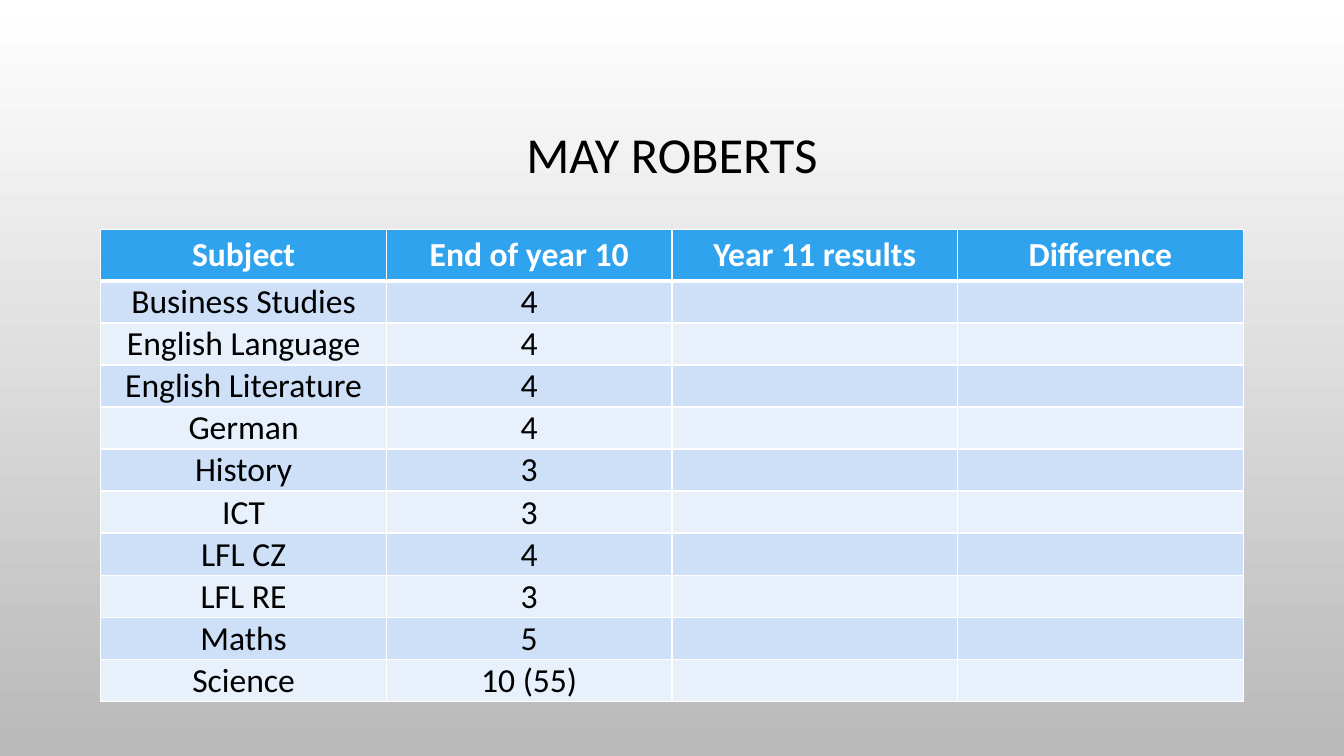
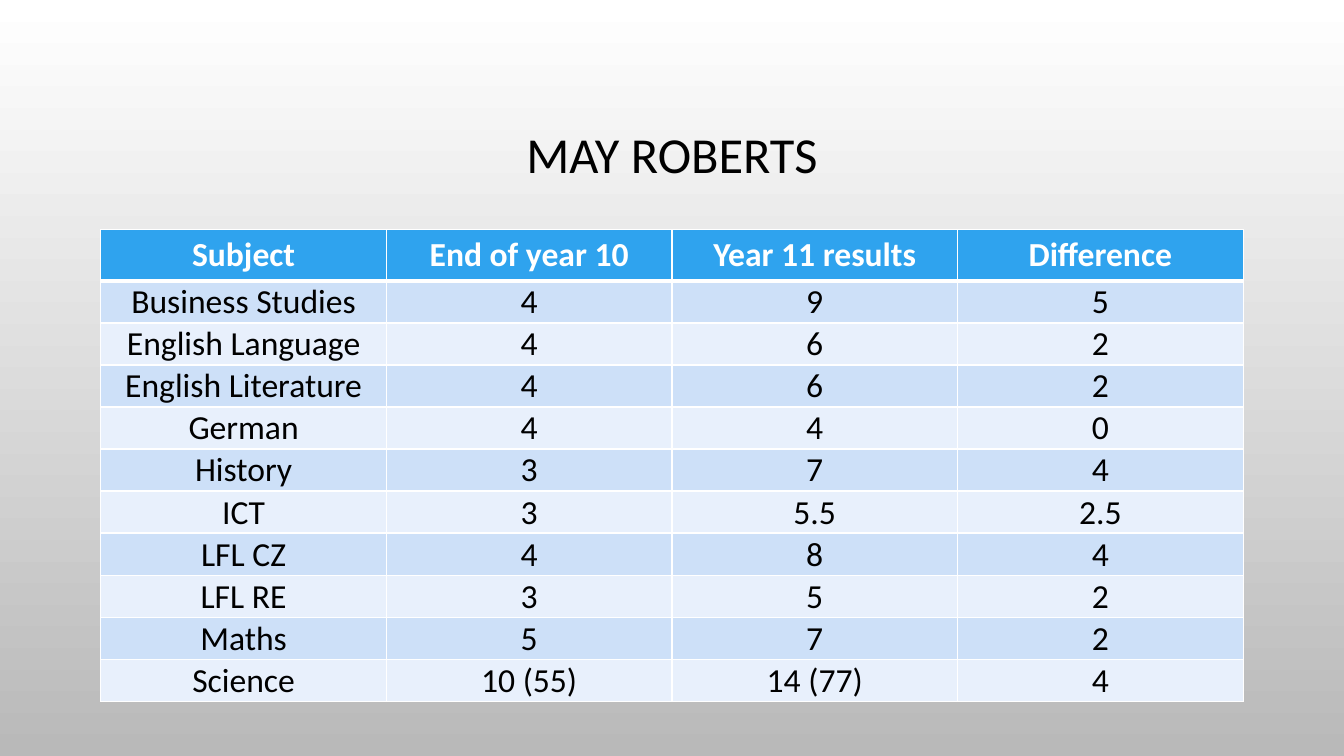
"""Build two slides comparing one pupil's results at the end of year 10 and in year 11."""
from lxml.etree import SubElement
from pptx import Presentation
from pptx.dml.color import RGBColor
from pptx.enum.text import MSO_ANCHOR, PP_ALIGN
from pptx.oxml.ns import qn
from pptx.util import Inches, Pt

WHITE = RGBColor(0xFF, 0xFF, 0xFF)
BLACK = RGBColor(0x00, 0x00, 0x00)
GREY = RGBColor(0xB9, 0xB9, 0xB9)
HEADER_BLUE = RGBColor(0x2F, 0xA3, 0xEE)
BAND_BLUES = [RGBColor(0xE8, 0xF0, 0xFC), RGBColor(0xCD, 0xE0, 0xF8)]

PUPIL = "MAY ROBERTS"
HEADINGS = ["Subject", "End of year 10", "Year 11 results", "Difference"]
RESULTS = [
    ["Business Studies", "4", "9", "5"],
    ["English Language", "4", "6", "2"],
    ["English Literature", "4", "6", "2"],
    ["German", "4", "4", "0"],
    ["History", "3", "7", "4"],
    ["ICT", "3", "5.5", "2.5"],
    ["LFL CZ", "4", "8", "4"],
    ["LFL RE", "3", "5", "2"],
    ["Maths", "5", "7", "2"],
    ["Science", "10 (55)", "14 (77)", "4"],
]


def write_text(frame, text, size=24, color=BLACK, bold=False, line_spacing=None):
    para = frame.paragraphs[0]
    para.alignment = PP_ALIGN.CENTER
    para.line_spacing = line_spacing
    span = para.add_run()
    span.text = text
    span.font.name = "Calibri"
    span.font.size = Pt(size)
    span.font.bold = bold
    span.font.color.rgb = color


def set_borders(cell, top, bottom):
    properties = cell._tc.get_or_add_tcPr()
    for side, width in (("L", 1), ("R", 1), ("T", top), ("B", bottom)):
        line = SubElement(properties, qn(f"a:ln{side}"), w=str(Pt(width)))
        fill = SubElement(line, qn("a:solidFill"))
        SubElement(fill, qn("a:srgbClr"), val=str(WHITE))


deck = Presentation()
deck.slide_width = Inches(13.33)
deck.slide_height = Inches(7.5)

background = deck.slide_master.background.fill
background.gradient()
background.gradient_angle = 270
for stop, color, position in zip(background.gradient_stops, (WHITE, GREY), (0, 1)):
    stop.color.rgb = color
    stop.position = position

title_only = deck.slide_layouts[5]

for filled_columns in (2, 4):
    page = deck.slides.add_slide(title_only)

    title = page.shapes.title
    title.left, title.top = Inches(1), Inches(0.68)
    title.width, title.height = Inches(11.33), Inches(1.75)
    title.text_frame.vertical_anchor = MSO_ANCHOR.MIDDLE
    write_text(title.text_frame, PUPIL, size=36, line_spacing=0.9)

    table = page.shapes.add_table(
        len(RESULTS) + 1, len(HEADINGS),
        Inches(1), Inches(2.28), Inches(11.33), Inches(4.6),
    ).table
    for row in table.rows:
        row.height = Inches(0.41)

    for column, heading in enumerate(HEADINGS):
        cell = table.cell(0, column)
        set_borders(cell, top=1, bottom=3)
        cell.fill.solid()
        cell.fill.fore_color.rgb = HEADER_BLUE
        write_text(cell.text_frame, heading, color=WHITE, bold=True)

    for row_number, result in enumerate(RESULTS, start=1):
        for column, value in enumerate(result):
            cell = table.cell(row_number, column)
            set_borders(cell, top=3 if row_number == 1 else 1, bottom=1)
            cell.fill.solid()
            cell.fill.fore_color.rgb = BAND_BLUES[row_number % 2]
            if column < filled_columns:
                cell.vertical_anchor = MSO_ANCHOR.BOTTOM
                cell.margin_left = cell.margin_right = cell.margin_top = Inches(0.01)
                cell.margin_bottom = 0
                write_text(cell.text_frame, value)

deck.save("out.pptx")
